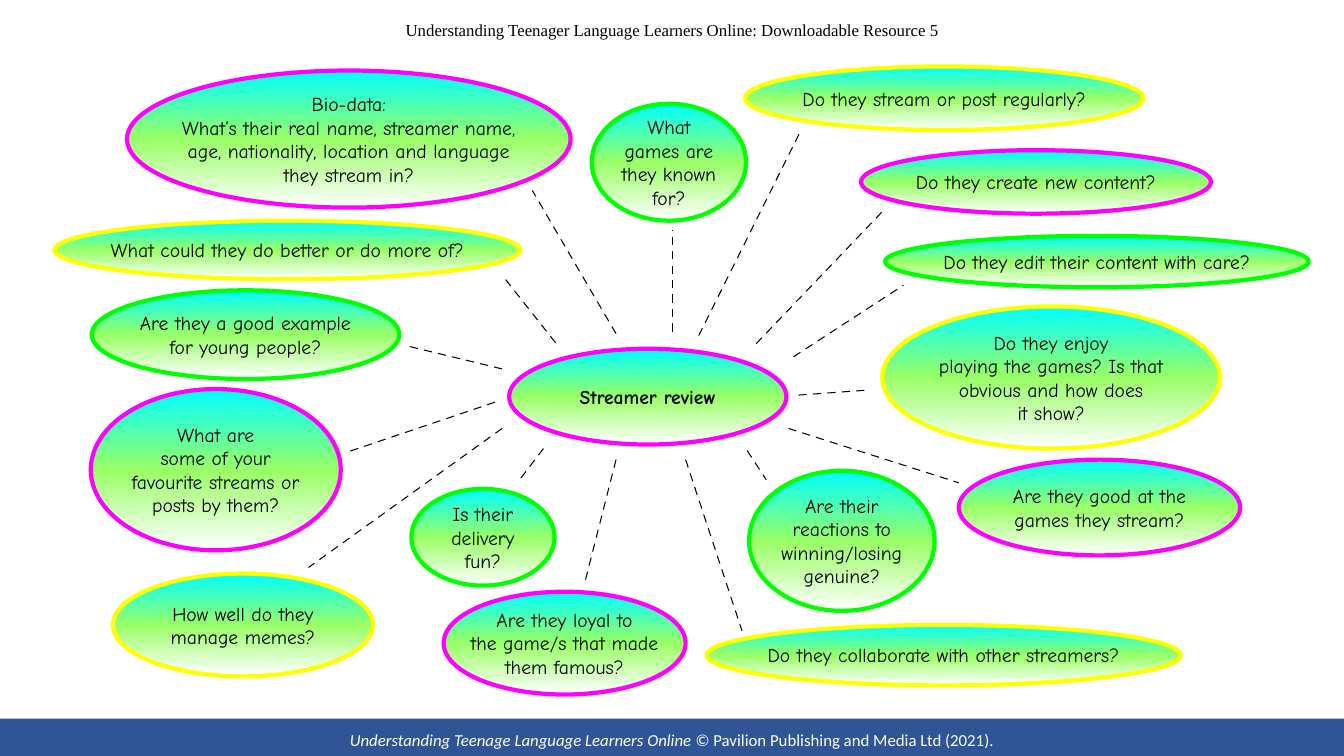
from copy import deepcopy

from lxml import etree
from pptx import Presentation
from pptx.dml.color import RGBColor
from pptx.enum import shapes, text
from pptx.oxml import ns
from pptx.util import Inches, Pt

COLORS = {
    "black": "000000", "white": "FFFFFF", "blue": "2F5597",
    "cyan": "00FFFF", "lime": "99FF66",
    "pink": "FF00FF", "green": "00FF00", "yellow": "FFFF00",
}

TOPIC = (5.05, 3.46, 2.75, 0.95, "pink", "Streamer review")

QUESTIONS = [
    (7.43, 4.67, 1.84, 1.39, "green", "Are their\nreactions to\nwinning/losing\ngenuine?"),
    (9.51, 4.56, 2.79, 0.95, "pink", "Are they good at the\ngames they stream?"),
    (8.75, 3.04, 3.35, 1.41, "yellow",
     "Do they enjoy\nplaying the games? Is that\nobvious and how does\nit show?"),
    (8.54, 1.49, 3.47, 0.63, "pink", "Do they create new content?"),
    (5.87, 1.03, 1.53, 1.16, "green", "What\ngames are\nthey known\nfor?"),
    (1.26, 0.7, 4.4, 1.36, "pink",
     "Bio-data:\nWhat‘s their real name, streamer name,\n"
     "age, nationality, location and language\nthey stream in?"),
    (0.54, 2.19, 4.62, 0.58, "yellow", "What could they do better or do more of?"),
    (0.91, 2.88, 3.05, 0.88, "green", "Are they a good example\nfor young people?"),
    (0.9, 3.86, 2.48, 1.6, "pink",
     "What are\nsome of your\nfavourite streams or\nposts by them?"),
    (4.08, 4.85, 1.42, 0.96, "green", "Is their\ndelivery\nfun?"),
    (4.4, 5.87, 2.4, 1.02, "pink",
     "Are they loyal to\nthe game/s that made\nthem famous?"),
    (7.01, 6.2, 4.7, 0.6, "yellow", "Do they collaborate with other streamers?"),
    (8.78, 2.34, 4.2, 0.51, "green", "Do they edit their content with care?"),
    (1.12, 5.69, 2.58, 1.02, "yellow", "How well do they\nmanage memes?"),
    (7.39, 0.66, 3.95, 0.63, "yellow", "Do they stream or post regularly?"),
]

SPOKES = [
    (7.5, 3.41, 8.75, 2.1), (6.67, 3.29, 6.67, 2.28), (6.11, 3.31, 5.28, 1.89),
    (4.98, 3.66, 4.03, 3.43), (4.91, 3.99, 3.43, 4.49), (6.11, 4.56, 5.8, 5.78),
    (6.8, 4.56, 7.36, 6.26), (7.41, 4.47, 7.6, 4.76), (7.82, 4.25, 9.51, 4.79),
    (7.92, 3.92, 8.61, 3.87), (6.93, 3.33, 7.95, 1.28), (5.51, 3.4, 4.98, 2.73),
    (5.39, 4.45, 5.13, 4.79), (7.87, 3.54, 8.96, 2.83), (4.98, 4.25, 3.06, 5.63),
]


def rgb(name):
    return RGBColor.from_string(COLORS[name])


def style_span(span, font, size, color, bold=None, italic=None):
    span.font.name = font
    span.font.size = Pt(size)
    span.font.color.rgb = rgb(color)
    span.font.bold = bold
    span.font.italic = italic


def fill_gradient(shape):
    shape.fill.gradient()
    shape.fill.gradient_angle = 270
    stop_list = shape.element.spPr.find(".//" + ns.qn("a:gsLst"))
    stop_list.append(deepcopy(stop_list[-1]))
    stops = zip(shape.fill.gradient_stops, (0, 0.5, 1), ("cyan", "lime", "white"))
    for stop, position, color in stops:
        stop.position = position
        stop.color.rgb = rgb(color)


def add_bubble(page, left, top, width, height, outline, wording, bold=None):
    bubble = page.shapes.add_shape(
        shapes.MSO_SHAPE.OVAL, Inches(left), Inches(top), Inches(width), Inches(height))
    bubble.shadow.inherit = False
    fill_gradient(bubble)
    bubble.line.color.rgb = rgb(outline)
    bubble.line.width = Pt(3)
    frame = bubble.text_frame
    frame.word_wrap = False
    frame.vertical_anchor = text.MSO_ANCHOR.MIDDLE
    frame.margin_left = frame.margin_right = Inches(0.06)
    frame.margin_top = frame.margin_bottom = Inches(0.03)
    frame.text = wording
    for para in frame.paragraphs:
        para.alignment = text.PP_ALIGN.CENTER
        style_span(para.runs[0], "Comic Neue", 14, "black", bold)


def add_spoke(page, x1, y1, x2, y2):
    spoke = page.shapes.add_connector(
        shapes.MSO_CONNECTOR.STRAIGHT, Inches(x1), Inches(y1), Inches(x2), Inches(y2))
    spoke.line.color.rgb = rgb("black")
    spoke.line.width = Pt(0.75)
    properties = spoke.element.spPr
    dashes = etree.SubElement(properties.find(ns.qn("a:ln")), ns.qn("a:custDash"))
    etree.SubElement(dashes, ns.qn("a:ds"), d="800000", sp="600000")
    etree.SubElement(properties, ns.qn("a:effectLst"))


def add_caption(page, left, top, width, height, font, color, parts):
    box = page.shapes.add_textbox(
        Inches(left), Inches(top), Inches(width), Inches(height))
    frame = box.text_frame
    frame.word_wrap = True
    frame.vertical_anchor = text.MSO_ANCHOR.MIDDLE
    para = frame.paragraphs[0]
    para.alignment = text.PP_ALIGN.CENTER
    for wording, italic in parts:
        span = para.add_run()
        span.text = wording
        style_span(span, font, 12, color, italic=italic)


def add_footer_bar(page, width):
    bar = page.shapes.add_shape(
        shapes.MSO_SHAPE.RECTANGLE, 0, Inches(7.13), width, Inches(0.4))
    bar.shadow.inherit = False
    bar.fill.solid()
    bar.fill.fore_color.rgb = rgb("blue")
    bar.line.fill.background()


def main():
    deck = Presentation()
    deck.slide_width = Inches(13.33)
    deck.slide_height = Inches(7.5)
    page = deck.slides.add_slide(deck.slide_layouts[6])
    add_caption(page, 0.92, 0.15, 11.5, 0.3, "Times New Roman", "black", [
        ("Understanding Teenager Language Learners Online: Downloadable Resource 5", None)])
    add_footer_bar(page, deck.slide_width)
    add_caption(page, 0, 7.22, 13.33, 0.23, "Calibri", "white", [
        ("Understanding Teenage Language Learners Online ", True),
        ("© Pavilion Publishing and Media Ltd (2021).", False)])
    add_bubble(page, *TOPIC, bold=True)
    for spoke in SPOKES:
        add_spoke(page, *spoke)
    for question in QUESTIONS:
        add_bubble(page, *question)
    deck.save("out.pptx")


if __name__ == "__main__":
    main()
